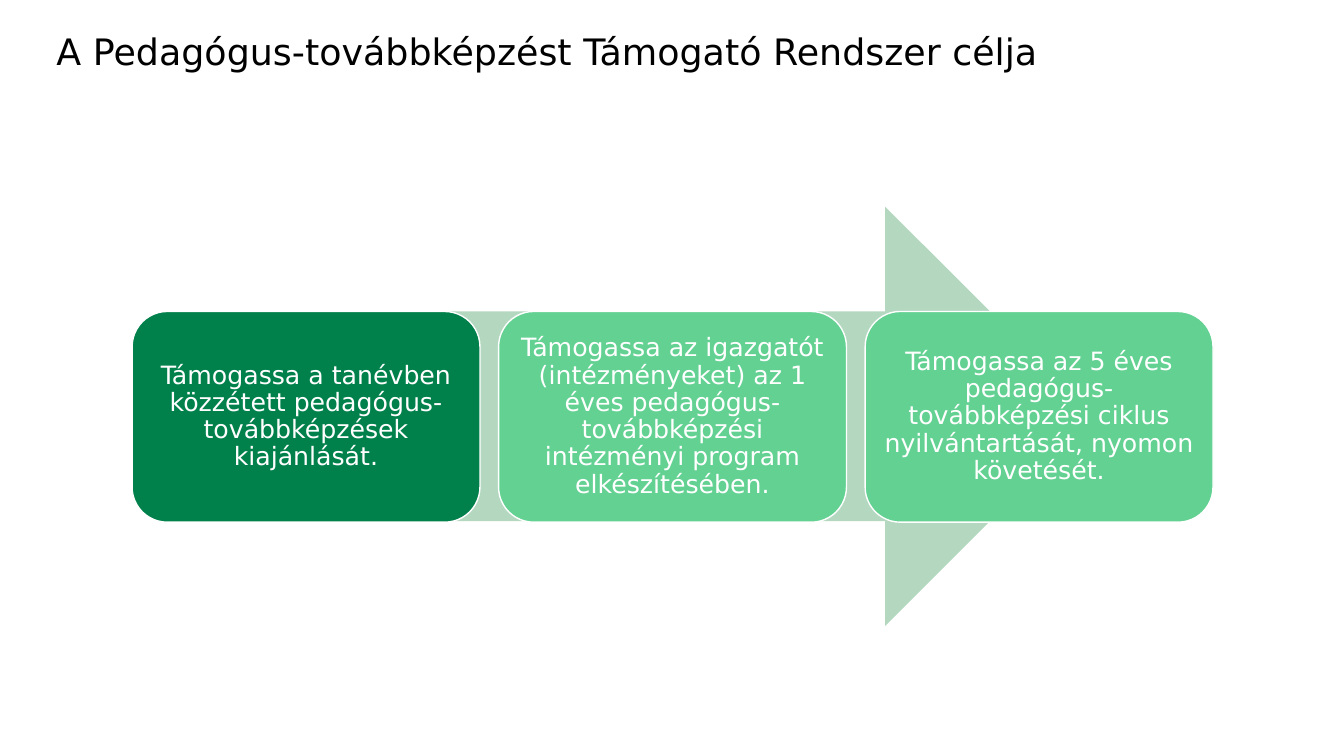
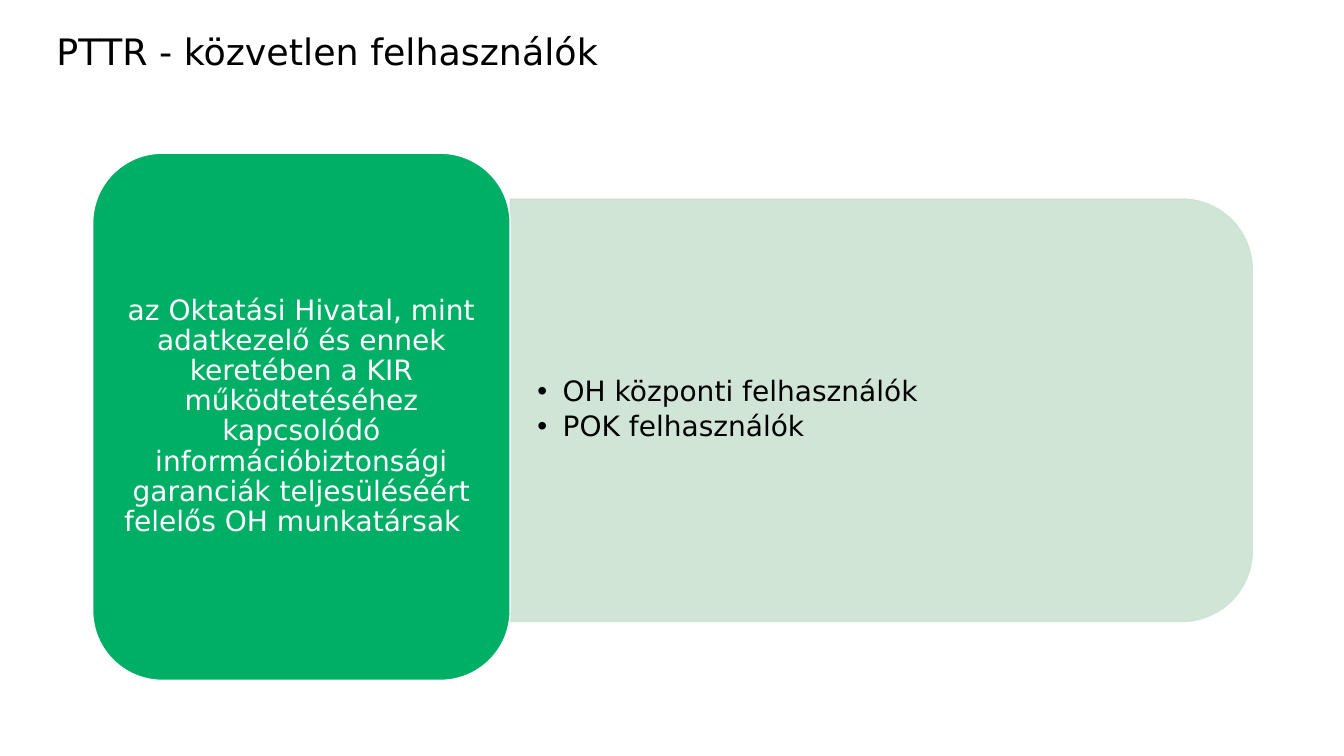
from dataclasses import dataclass

from lxml.etree import SubElement
from pptx import Presentation
from pptx.dml.color import RGBColor
from pptx.enum.shapes import MSO_SHAPE
from pptx.enum.text import MSO_ANCHOR, MSO_AUTO_SIZE, PP_ALIGN
from pptx.oxml.ns import qn
from pptx.presentation import Presentation as Deck
from pptx.shapes.autoshape import Shape
from pptx.slide import Slide
from pptx.text.text import TextFrame
from pptx.util import Inches, Pt

SLIDE_WIDTH = Inches(13.33)
SLIDE_HEIGHT = Inches(7.5)
FONT_NAME = "DejaVu Sans"
BLACK = "000000"
WHITE = "FFFFFF"
DARK_GREEN = "00814B"
LIGHT_GREEN = "62D192"
GREEN = "00AF66"
ARROW_GREEN = "B4D8BF"
PANEL_GREEN = "CCE3D3"
CONTENT_LAYOUT = 1
TITLE_ONLY_LAYOUT = 5


@dataclass(frozen=True)
class Area:
    """Percentages of the slide's width and height."""

    left: float
    top: float
    width: float
    height: float

    def lengths(self) -> tuple[int, int, int, int]:
        return (
            round(SLIDE_WIDTH * self.left / 100),
            round(SLIDE_HEIGHT * self.top / 100),
            round(SLIDE_WIDTH * self.width / 100),
            round(SLIDE_HEIGHT * self.height / 100),
        )


@dataclass(frozen=True)
class TextStyle:
    size: float
    color: str
    alignment: PP_ALIGN
    insets: tuple[float, float, float, float]
    space_after: float = 0


@dataclass(frozen=True)
class Card:
    text: str
    fill: str
    area: Area
    style: TextStyle


TITLE_AREA = Area(3.45, 0, 86.27, 13.73)
TITLE_STYLE = TextStyle(26, BLACK, PP_ALIGN.LEFT, (0.1, 0.08, 0.1, 0.05))
GOAL_STYLE = TextStyle(18, WHITE, PP_ALIGN.CENTER, (0.07, 0.07, 0.07, 0.07))
OFFICE_STYLE = TextStyle(20, WHITE, PP_ALIGN.CENTER, (0.08, 0.04, 0.08, 0.04))
LIST_STYLE = TextStyle(20, BLACK, PP_ALIGN.LEFT, (0.27, 0.14, 0.27, 0.14), 3.5)

ARROW_AREA = Area(18.6, 27.33, 62.86, 55.47)
GOAL_LEFT = 9.83
GOAL_STEP = 27.27
GOALS = (
    ("Támogassa a tanévben közzétett pedagógus-továbbképzések kiajánlását.", DARK_GREEN),
    (
        "Támogassa az igazgatót (intézményeket) az 1 éves pedagógus-továbbképzési "
        "intézményi program elkészítésében.",
        LIGHT_GREEN,
    ),
    (
        "Támogassa az 5 éves pedagógus-továbbképzési ciklus nyilvántartását, "
        "nyomon követését.",
        LIGHT_GREEN,
    ),
)

PANEL_AREA = Area(37.96, 26.33, 55.21, 55.87)
LIST_AREA = Area(37.96, 29.07, 53.71, 50.4)
USERS = ("OH központi felhasználók", "POK felhasználók")
OFFICE_CARD = Card(
    "az Oktatási Hivatal, mint adatkezelő és ennek keretében a KIR működtetéséhez "
    "kapcsolódó információbiztonsági garanciák teljesüléséért felelős OH munkatársak  ",
    GREEN,
    Area(6.9, 20.27, 31.06, 69.73),
    OFFICE_STYLE,
)


def color(value: str) -> RGBColor:
    return RGBColor.from_string(value)


def place(shape: Shape, area: Area) -> None:
    shape.left, shape.top, shape.width, shape.height = area.lengths()


def format_text(frame: TextFrame, style: TextStyle) -> None:
    frame.word_wrap = True
    frame.auto_size = MSO_AUTO_SIZE.NONE
    frame.vertical_anchor = MSO_ANCHOR.MIDDLE
    left, top, right, bottom = style.insets
    frame.margin_left, frame.margin_top = Inches(left), Inches(top)
    frame.margin_right, frame.margin_bottom = Inches(right), Inches(bottom)
    for paragraph in frame.paragraphs:
        paragraph.alignment = style.alignment
        paragraph.line_spacing = 0.9
        paragraph.space_before = Pt(0)
        paragraph.space_after = Pt(style.space_after)
        for run in paragraph.runs:
            run.font.name = FONT_NAME
            run.font.size = Pt(style.size)
            run.font.color.rgb = color(style.color)


def add_titled_slide(presentation: Deck, layout: int, title: str) -> Slide:
    slide = presentation.slides.add_slide(presentation.slide_layouts[layout])
    shape = slide.shapes.title
    place(shape, TITLE_AREA)
    shape.text_frame.text = title
    format_text(shape.text_frame, TITLE_STYLE)
    return slide


def add_filled_shape(slide: Slide, preset: MSO_SHAPE, area: Area, fill: str) -> Shape:
    shape = slide.shapes.add_shape(preset, *area.lengths())
    shape.shadow.inherit = False
    shape.fill.solid()
    shape.fill.fore_color.rgb = color(fill)
    shape.line.fill.background()
    return shape


def set_line(shape: Shape, line_color: str) -> None:
    shape.line.color.rgb = color(line_color)
    shape.line.width = Pt(1)


def add_card(slide: Slide, card: Card) -> None:
    shape = add_filled_shape(slide, MSO_SHAPE.ROUNDED_RECTANGLE, card.area, card.fill)
    set_line(shape, WHITE)
    shape.text_frame.text = card.text
    format_text(shape.text_frame, card.style)


def add_panel(slide: Slide) -> Shape:
    panel = add_filled_shape(
        slide, MSO_SHAPE.ROUND_2_SAME_RECTANGLE, PANEL_AREA, PANEL_GREEN
    )
    set_line(panel, PANEL_GREEN)
    left, top, width, height = PANEL_AREA.lengths()
    panel.left = left + (width - height) // 2
    panel.top = top + (height - width) // 2
    panel.width, panel.height = height, width
    panel.rotation = 90
    for color_element in panel.element.spPr.iter(qn("a:srgbClr")):
        SubElement(color_element, qn("a:alpha"), val="90000")
    return panel


def fill_list(body: Shape, items: tuple[str, ...]) -> None:
    place(body, LIST_AREA)
    frame = body.text_frame
    frame.text = "\n".join(items)
    for paragraph in frame.paragraphs:
        properties = paragraph._p.get_or_add_pPr()
        properties.set("marL", str(Inches(0.25)))
        properties.set("indent", str(-Inches(0.25)))
        SubElement(properties, qn("a:buChar"), char="•")
    format_text(frame, LIST_STYLE)


def build_goals(presentation: Deck) -> None:
    slide = add_titled_slide(
        presentation, TITLE_ONLY_LAYOUT, "A Pedagógus-továbbképzést Támogató Rendszer célja"
    )
    add_filled_shape(slide, MSO_SHAPE.RIGHT_ARROW, ARROW_AREA, ARROW_GREEN)
    for column, (text, fill) in enumerate(GOALS):
        area = Area(GOAL_LEFT + column * GOAL_STEP, 41.2, 25.88, 27.87)
        add_card(slide, Card(text, fill, area, GOAL_STYLE))


def build_users(presentation: Deck) -> None:
    slide = add_titled_slide(presentation, CONTENT_LAYOUT, "PTTR - közvetlen felhasználók")
    body = slide.placeholders[1]
    fill_list(body, USERS)
    body.element.addprevious(add_panel(slide).element)
    add_card(slide, OFFICE_CARD)


def main() -> None:
    presentation = Presentation()
    presentation.slide_width = SLIDE_WIDTH
    presentation.slide_height = SLIDE_HEIGHT
    build_goals(presentation)
    build_users(presentation)
    presentation.save("out.pptx")


if __name__ == "__main__":
    main()
